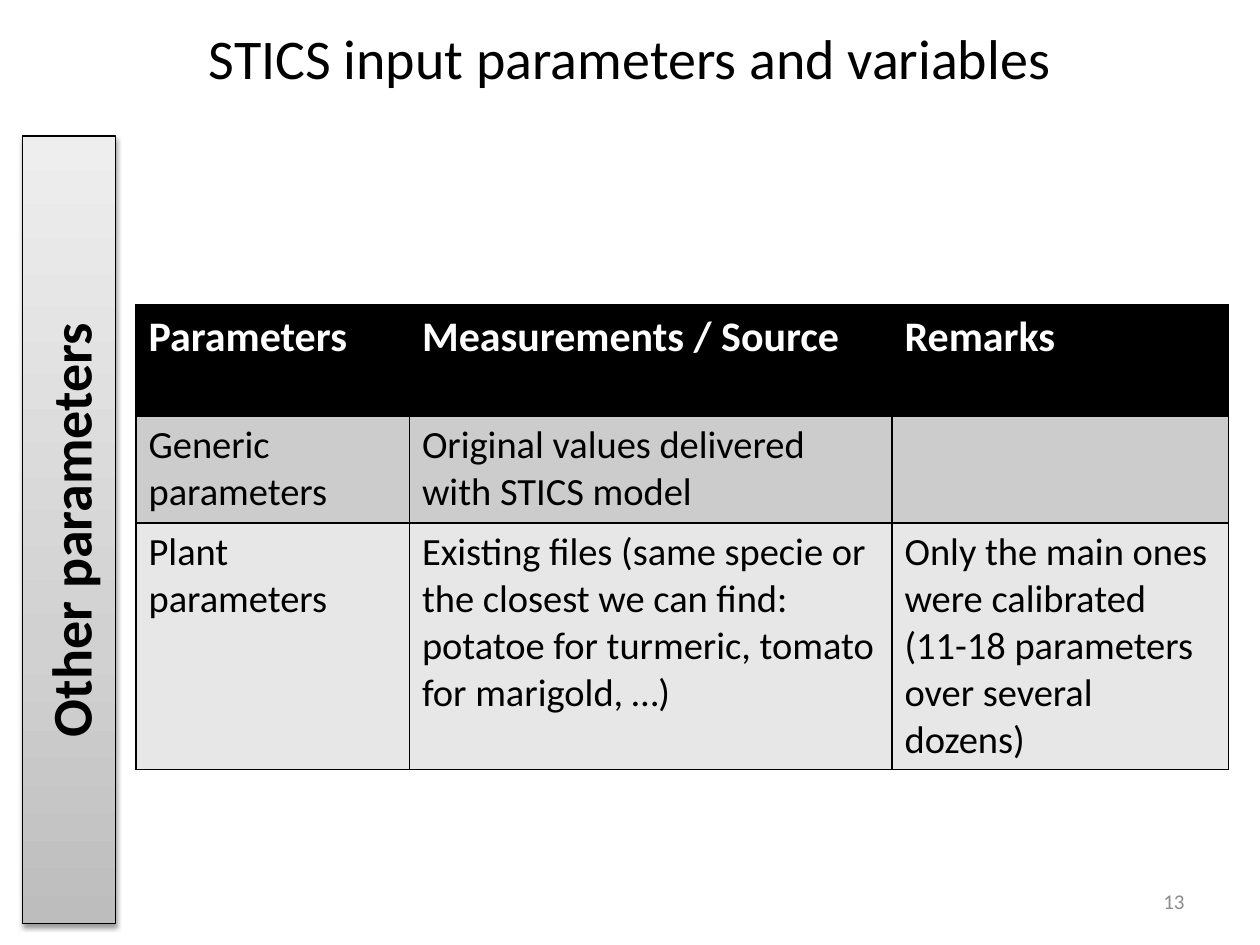
from copy import deepcopy

from lxml.etree import SubElement
from pptx import Presentation
from pptx.dml.color import RGBColor
from pptx.enum.shapes import MSO_SHAPE
from pptx.enum.text import MSO_ANCHOR, PP_ALIGN
from pptx.oxml import parse_xml
from pptx.oxml.ns import nsdecls, qn
from pptx.util import Inches, Pt

BLACK = RGBColor(0, 0, 0)
WHITE = RGBColor(0xFF, 0xFF, 0xFF)
GREY = RGBColor(0x8C, 0x8C, 0x8C)
BANDS = RGBColor(0xCC, 0xCC, 0xCC), RGBColor(0xE7, 0xE7, 0xE7)
BAR_STOPS = [(0, RGBColor(0xBD, 0xBD, 0xBD)), (0.35, RGBColor(0xD1, 0xD1, 0xD1)),
             (1, RGBColor(0xEE, 0xEE, 0xEE))]
FONT = "Calibri"

COL_WIDTHS = 2.17, 3.83, 2.67
ROW_HEIGHTS = 0.88, 0.85, 1.95
ROWS = [
    ("Parameters", "Measurements / Source", "Remarks"),
    ("Generic parameters", "Original values delivered with STICS model", ""),
    ("Plant parameters",
     "Existing files (same specie or the closest we can find: "
     "potatoe for turmeric, tomato for marigold, …)",
     "Only the main ones were calibrated (11-18 parameters over several dozens)"),
]


def write(tf, text, size, color=BLACK, bold=False, align=PP_ALIGN.LEFT):
    tf.word_wrap = True
    p = tf.paragraphs[0]
    p.alignment = align
    r = p.add_run()
    r.text = text
    r.font.name, r.font.size, r.font.bold = FONT, Pt(size), bold
    r.font.color.rgb = color


def add_label(slide, box, text, size, color, align):
    tf = slide.shapes.add_textbox(*map(Inches, box)).text_frame
    tf.vertical_anchor = MSO_ANCHOR.MIDDLE
    write(tf, text, size, color, align=align)


def add_side_bar(slide, box, text):
    """Upright bar with a grey gradient, a soft shadow and text that reads upwards."""
    sp = slide.shapes.add_shape(MSO_SHAPE.RECTANGLE, *map(Inches, box))
    sp.line.color.rgb = BLACK
    sp.line.width = Pt(0.75)

    sp.fill.gradient()
    sp.fill.gradient_angle = 90
    first = sp._element.spPr.find(".//" + qn("a:gs"))
    first.addnext(deepcopy(first))
    for stop, (position, color) in zip(sp.fill.gradient_stops, BAR_STOPS):
        stop.position = position
        stop.color.rgb = color

    sp._element.spPr.append(parse_xml(
        f'<a:effectLst {nsdecls("a")}><a:outerShdw blurRad="{Pt(3.1)}" dist="{Pt(1.6)}" '
        'dir="5400000" rotWithShape="0"><a:srgbClr val="000000"><a:alpha val="38000"/>'
        '</a:srgbClr></a:outerShdw></a:effectLst>'))

    tf = sp.text_frame
    tf.vertical_anchor = MSO_ANCHOR.MIDDLE
    tf._txBody.bodyPr.set("vert", "vert270")
    write(tf, text, 32, bold=True, align=PP_ALIGN.CENTER)


def set_borders(cell):
    tc_pr = cell._tc.get_or_add_tcPr()
    for i, side in enumerate(("lnL", "lnR", "lnT", "lnB")):
        ln = parse_xml(f'<a:{side} {nsdecls("a")} w="{Pt(1)}"/>')
        fill = SubElement(ln, qn("a:solidFill"))
        SubElement(fill, qn("a:srgbClr"), val=str(BLACK))
        tc_pr.insert(i, ln)


def add_parameter_table(slide, left, top):
    size = sum(COL_WIDTHS), sum(ROW_HEIGHTS)
    table = slide.shapes.add_table(len(ROWS), len(COL_WIDTHS),
                                   *map(Inches, (left, top, *size))).table
    for col, width in zip(table.columns, COL_WIDTHS):
        col.width = Inches(width)
    for i, (row, height, texts) in enumerate(zip(table.rows, ROW_HEIGHTS, ROWS)):
        row.height = Inches(height)
        header = i == 0
        for cell, text in zip(row.cells, texts):
            cell.fill.solid()
            cell.fill.fore_color.rgb = BLACK if header else BANDS[(i - 1) % 2]
            set_borders(cell)
            if text:
                write(cell.text_frame, text, 24 if header else 22,
                      WHITE if header else BLACK, bold=header)


def main():
    prs = Presentation()
    prs.slide_width, prs.slide_height = Inches(10), Inches(7.5)
    slide = prs.slides.add_slide(prs.slide_layouts[6])
    add_parameter_table(slide, 1.08, 2.42)
    add_side_bar(slide, (0.18, 1.08, 0.74, 6.25), "Other parameters")
    add_label(slide, (7.17, 6.95, 2.33, 0.4), "13", 12, GREY, PP_ALIGN.RIGHT)
    add_label(slide, (0.5, -0.17, 9, 1.25), "STICS input parameters and variables",
              32, BLACK, PP_ALIGN.CENTER)
    prs.save("out.pptx")


if __name__ == "__main__":
    main()
